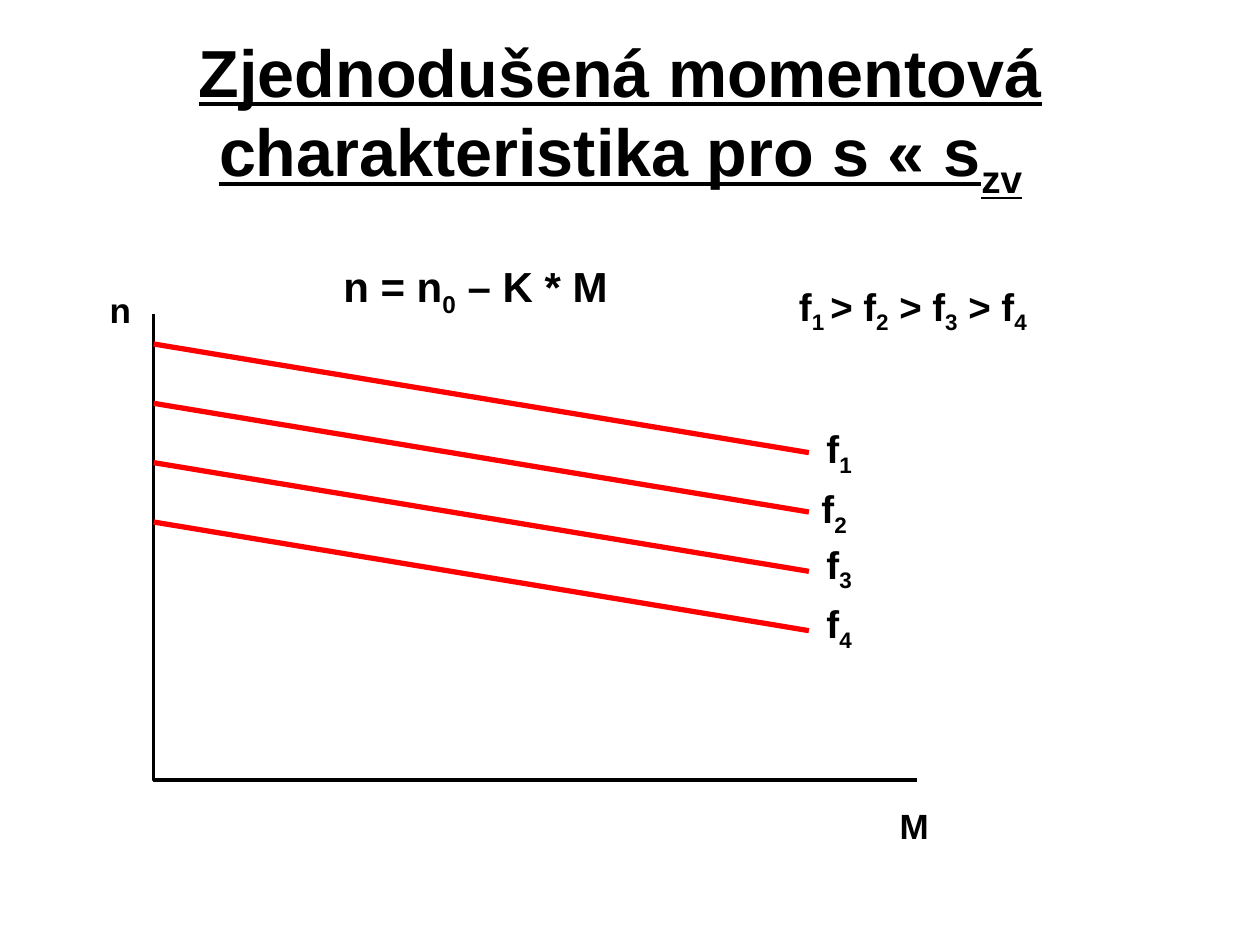
from lxml import etree
from pptx import Presentation
from pptx.dml.color import RGBColor
from pptx.enum.shapes import MSO_CONNECTOR
from pptx.enum.text import MSO_ANCHOR, MSO_AUTO_SIZE, PP_ALIGN
from pptx.oxml.ns import qn
from pptx.util import Inches, Pt

LINE = MSO_CONNECTOR.STRAIGHT
TOP, MID, LOW = MSO_ANCHOR.TOP, MSO_ANCHOR.MIDDLE, MSO_ANCHOR.BOTTOM
CENTER = PP_ALIGN.CENTER
GROW = MSO_AUTO_SIZE.SHAPE_TO_FIT_TEXT

THEME = {
    "font": "Arial", "ink": RGBColor(0, 0, 0), "curve": RGBColor(255, 0, 0),
    "title": 38, "rule": 24, "label": 22, "axis": 20,
    "thin": 2, "thick": 3, "pad": 0.04, "sub": "-25000",
}

# Content: text between underscores is subscript; places are percent of the slide
TITLE = ("Zjednodušená momentová charakteristika pro s « s_zv", (2, 2.8, 94.5, 18.93))
RULE = ("n = n_0_ – K * M ", (25.6, 26.93, 25.2, 6.67))
LABELS = [
    ("n", "axis", (8.3, 30, 2.5, 5.47)),
    ("M", "axis", (71, 84.67, 3.1, 5.47)),
    ("f_1 _> f_2_ > f_3_ > f_4", "label", (62.6, 30, 19.7, 6)),
]
# Frequency labels: left and top of each
FREQS = [("f_1", 65.1, 45.07), ("f_2", 64.7, 51.47),
         ("f_3", 65.1, 57.33), ("f_4", 65.1, 63.6)]
LABELS += [(text, "label", (x, y, 3, 6)) for text, x, y in FREQS]

AXES = [(12.2, 33.2), (12.2, 82.53), (72.8, 82.53)]
START, RUN, DROP, STEP = (12.2, 36.4), 52, 11.5, 6.28

deck = Presentation()
deck.slide_width, deck.slide_height = Inches(10), Inches(7.5)
slide = deck.slides.add_slide(deck.slide_layouts[6])
shapes = slide.shapes


def place(x, y):
    return int(deck.slide_width * x / 100), int(deck.slide_height * y / 100)


def style(item, form):
    for key, value in form.items():
        setattr(item, key, value)


def write(text, size, box, frame, line=False):
    x, y, w, h = box
    body = shapes.add_textbox(*place(x, y), *place(w, h)).text_frame
    style(body, frame)
    para = body.paragraphs[0]
    para.alignment = CENTER
    for i, part in enumerate(text.split("_")):
        run = para.add_run()
        run.text = part
        style(run.font, {"name": THEME["font"], "size": Pt(THEME[size]),
                         "bold": True, "underline": line})
        run.font.color.rgb = THEME["ink"]
        if i % 2:
            run.font._element.set("baseline", THEME["sub"])


def stroke(shape, color, width):
    shape.line.color.rgb = THEME[color]
    shape.line.width = Pt(THEME[width])


# Title
write(*TITLE[:1], "title", TITLE[1],
      {"word_wrap": True, "vertical_anchor": MID}, line=True)

# Axes
path = [place(*point) for point in AXES]
pen = shapes.build_freeform(*path[0])
pen.add_line_segments(path[1:], close=False)
axes = pen.convert_to_shape()
axes.shadow.inherit = False
axes.fill.background()
stroke(axes, "ink", "thin")

# Parallel speed lines, one for each frequency
for i in range(len(FREQS)):
    x, y = START[0], START[1] + i * STEP
    curve = shapes.add_connector(LINE, *place(x, y), *place(x + RUN, y + DROP))
    stroke(curve, "curve", "thick")
    etree.SubElement(curve._element.spPr, qn("a:effectLst"))

# Labels
pad = Inches(THEME["pad"])
tight = {"word_wrap": False, "auto_size": GROW, "vertical_anchor": LOW}
tight.update({"margin_" + side: pad for side in ("left", "right", "top", "bottom")})
for text, size, box in LABELS:
    write(text, size, box, tight)

# Formula
write(RULE[0], "rule", RULE[1],
      {"word_wrap": True, "auto_size": GROW, "vertical_anchor": TOP})

deck.save("out.pptx")
